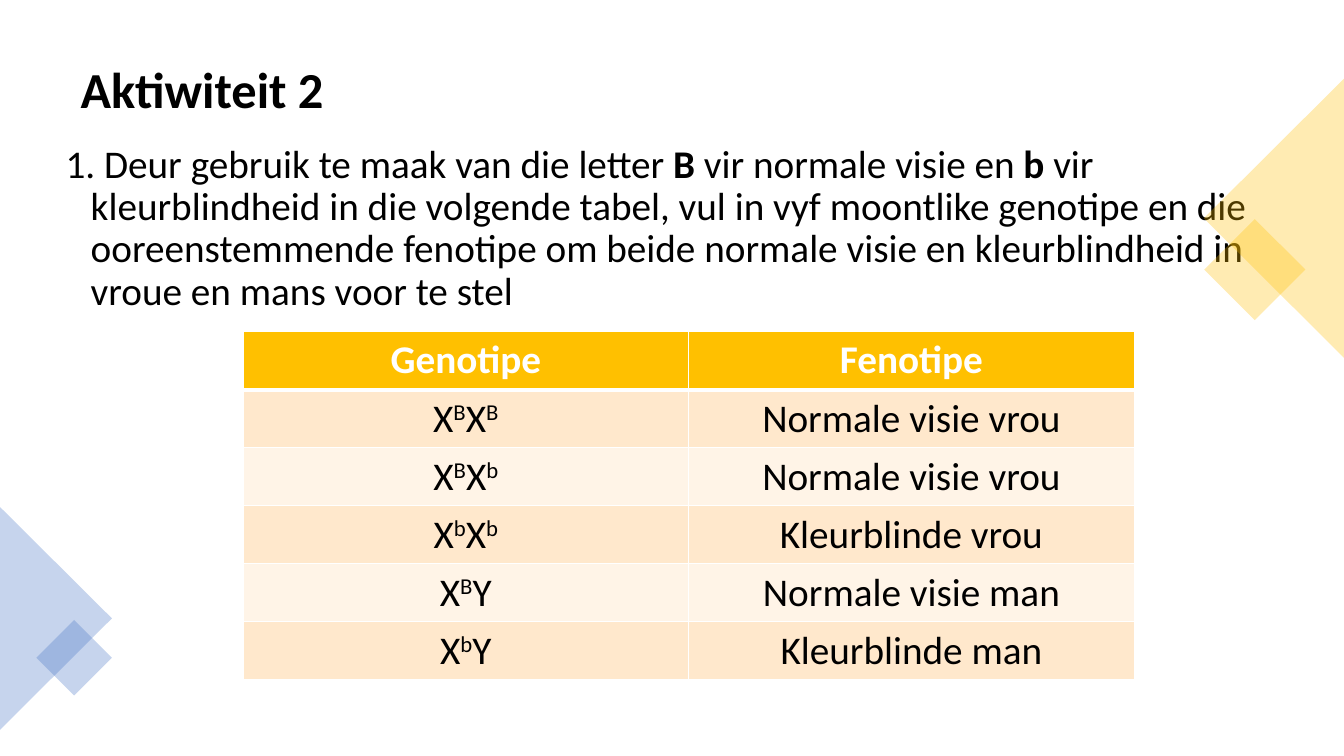
from lxml import etree
from pptx import Presentation
from pptx.dml.color import RGBColor
from pptx.enum.shapes import MSO_SHAPE
from pptx.enum.text import MSO_ANCHOR, MSO_AUTO_SIZE, PP_ALIGN
from pptx.oxml.ns import qn
from pptx.util import Emu, Pt

PX = 9144  # 100 px to the inch
FONT = "Calibri"
LEFT, CENTER = PP_ALIGN.LEFT, PP_ALIGN.CENTER
TOP, MIDDLE = MSO_ANCHOR.TOP, MSO_ANCHOR.MIDDLE
NO_AUTOFIT = MSO_AUTO_SIZE.NONE
DIAMOND, TRIANGLE = MSO_SHAPE.RECTANGLE, MSO_SHAPE.ISOSCELES_TRIANGLE

COLORS = {
    "text": "000000",
    "white": "FFFFFF",
    "gold": "FFC000",
    "blue": "4472C4",
    "band_dark": "FFE8CC",
    "band_light": "FFF4E7",
}

TITLE = "Aktiwiteit 2"
QUESTION = [
    ("1. Deur gebruik te maak van die letter ", False),
    ("B ", True),
    ("vir normale visie en ", False),
    ("b ", True),
    ("vir kleurblindheid in die volgende tabel, vul in vyf moontlike genotipe "
     "en die ooreenstemmende fenotipe om beide normale visie en "
     "kleurblindheid in vroue en mans voor te stel", False),
]
HEADERS = ["Genotipe", "Fenotipe"]
GENOTYPES = [
    ("XBXB", "Normale visie vrou"),
    ("XBXb", "Normale visie vrou"),
    ("XbXb", "Kleurblinde vrou"),
    ("XBY", "Normale visie man"),
    ("XbY", "Kleurblinde man"),
]
# shape, left, top, width, height, rotation, colour
DECORATIONS = [
    (DIAMOND, 1209, 232, 71, 71, 45, "gold"),
    (TRIANGLE, 1125, 147, 277, 139, 270, "gold"),
    (TRIANGLE, -55, 558, 221, 111, 90, "blue"),
    (DIAMOND, 47, 626, 53, 53, 45, "blue"),
]


def px(*lengths):
    return [Emu(n * PX) for n in lengths]


def rgb(name):
    return RGBColor.from_string(COLORS[name])


def set_attrs(obj, **values):
    for name, value in values.items():
        setattr(obj, name, value)


def add_run(p, text, size=28, bold=False, color="text"):
    r = p.add_run()
    r.text = text
    set_attrs(r.font, name=FONT, size=Pt(size), bold=bold)
    r.font.color.rgb = rgb(color)
    return r


def fill_placeholder(sp, box, anchor, runs, size, **paragraph):
    """Move a placeholder and write one paragraph of (text, bold) runs."""
    left, top, width, height = px(*box)
    set_attrs(sp, left=left, top=top, width=width, height=height)
    tf = sp.text_frame
    set_attrs(tf, word_wrap=True, auto_size=NO_AUTOFIT, vertical_anchor=anchor)
    p = tf.paragraphs[0]
    set_attrs(p, alignment=LEFT, line_spacing=0.9, **paragraph)
    for text, bold in runs:
        add_run(p, text, size, bold)
    return p


def set_hanging_indent(p, indent):
    pPr = p._p.get_or_add_pPr()
    pPr.set("marL", str(indent * PX))
    pPr.set("indent", str(-indent * PX))
    etree.SubElement(pPr, qn("a:buNone"))


def add_decoration(slide, kind, left, top, width, height, rotation, color):
    sp = slide.shapes.add_shape(kind, *px(left, top, width, height))
    sp.rotation = rotation
    sp.shadow.inherit = False
    sp.fill.solid()
    sp.fill.fore_color.rgb = rgb(color)
    sp.line.fill.background()
    clr = sp._element.spPr.find(qn("a:solidFill")).find(qn("a:srgbClr"))
    etree.SubElement(clr, qn("a:alpha"), val="30000")


def set_borders(cell, bottom):
    tcPr = cell._tc.get_or_add_tcPr()
    for side, width in (("L", 1), ("R", 1), ("T", 1), ("B", bottom)):
        ln = etree.SubElement(tcPr, qn("a:ln" + side), w=str(Pt(width)))
        fill = etree.SubElement(ln, qn("a:solidFill"))
        etree.SubElement(fill, qn("a:srgbClr"), val=COLORS["white"])


def format_cell(cell, fill, bottom=1):
    """Set borders and fill, and return the centred paragraph."""
    set_borders(cell, bottom)
    cell.fill.solid()
    cell.fill.fore_color.rgb = rgb(fill)
    p = cell.text_frame.paragraphs[0]
    p.alignment = CENTER
    return p


def add_genotype(p, genotype):
    """Write the chromosomes, with the alleles B and b as superscripts."""
    for letter in genotype:
        r = add_run(p, letter)
        if letter in "Bb":
            r._r.get_or_add_rPr().set("baseline", "30000")


def add_genotype_table(slide):
    rows = len(GENOTYPES) + 1
    frame = slide.shapes.add_table(rows, 2, *px(241, 329, 884, 57 * rows))
    table = frame.table
    for col, header in enumerate(HEADERS):
        p = format_cell(table.cell(0, col), "gold", bottom=3)
        add_run(p, header, bold=True, color="white")
    for row, (genotype, phenotype) in enumerate(GENOTYPES, start=1):
        band = "band_dark" if row % 2 else "band_light"
        add_genotype(format_cell(table.cell(row, 0), band), genotype)
        add_run(format_cell(table.cell(row, 1), band), phenotype)


def main():
    prs = Presentation()
    prs.slide_width, prs.slide_height = px(1333, 750)
    slide = prs.slides.add_slide(prs.slide_layouts[1])
    title, body = slide.placeholders
    fill_placeholder(title, (70, 29, 1193, 124), MIDDLE, [(TITLE, True)], 36)
    question = fill_placeholder(body, (55, 138, 1193, 481), TOP, QUESTION, 28,
                                space_before=Pt(10))
    set_hanging_indent(question, 25)
    for decoration in DECORATIONS:
        add_decoration(slide, *decoration)
    add_genotype_table(slide)
    prs.save("out.pptx")


if __name__ == "__main__":
    main()
